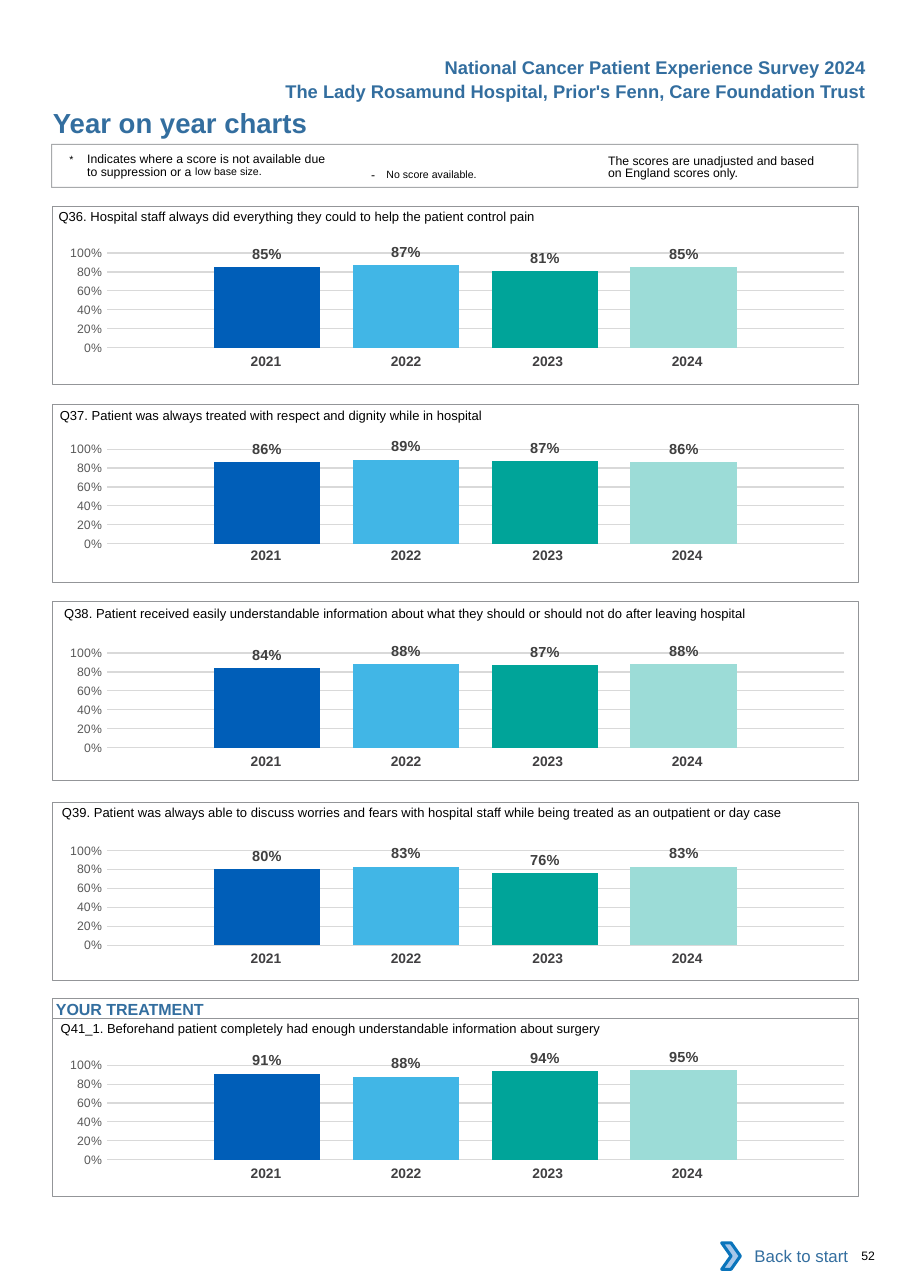
"""Build the year on year charts page of the patient experience survey."""
from lxml import etree
from pptx import Presentation
from pptx.chart.data import CategoryChartData
from pptx.dml.color import RGBColor
from pptx.enum.chart import XL_CHART_TYPE as ChartType, XL_LABEL_POSITION as LabelPosition, XL_TICK_MARK as TickMark
from pptx.enum.shapes import MSO_SHAPE as Shape
from pptx.enum.text import MSO_ANCHOR as Anchor, MSO_AUTO_SIZE as AutoSize, PP_ALIGN as Align
from pptx.oxml import parse_xml
from pptx.oxml.ns import nsdecls, qn
from pptx.util import Cm, Pt

BLUE = RGBColor(0x33, 0x6E, 0x9F)
BLACK = RGBColor(0x00, 0x00, 0x00)
WHITE = RGBColor(0xFF, 0xFF, 0xFF)
BORDER = RGBColor(0x93, 0x95, 0x98)
GRID = RGBColor(0xD9, 0xD9, 0xD9)
AXIS_TEXT = RGBColor(0x59, 0x59, 0x59)
LABEL_TEXT = RGBColor(0x40, 0x40, 0x40)
YEAR_TEXT = RGBColor(0x41, 0x40, 0x42)
CHEVRON_FILL = RGBColor(0xA8, 0xC7, 0xE9)
CHEVRON_LINE = RGBColor(0x0A, 0x74, 0xBB)
SERIES_COLORS = [RGBColor(0x00, 0x5E, 0xB8), RGBColor(0x41, 0xB6, 0xE6),
                 RGBColor(0x00, 0xA4, 0x99), RGBColor(0x9C, 0xDC, 0xD7)]
YEARS = ["2021", "2022", "2023", "2024"]
YEAR_WIDTHS = [3.23, 3.23, 3.4, 3.23]
YEAR_RIGHT_MARGINS = [0, 0, 0.1, 0.3]
PANEL_LEFT, PANEL_WIDTH = 1.21, 18.59
NO_TABLE_STYLE = "{2D5ABB26-0587-4C30-8999-92F81FD0307C}"
PLOT_AREA = {"x": 0.079, "y": 0.145, "w": 0.915, "h": 0.666}

PANELS = [
    ("Q36. Hospital staff always did everything they could to help the patient control pain",
     (1.32, 4.57), 0.03, 8.03, 5.36, 4.75, [0.85, 0.87, 0.81, 0.85]),
    ("Q37. Patient was always treated with respect and dignity while in hospital",
     (1.35, 9.17), 0.03, 12.5, 9.88, 9.32, [0.86, 0.89, 0.87, 0.86]),
    ("Q38. Patient received easily understandable information about what they should or should not do "
     "after leaving hospital",
     (1.4, 13.72), 0.08, 17.25, 14.58, 13.87, [0.84, 0.88, 0.87, 0.88]),
    ("Q39. Patient was always able to discuss worries and fears with hospital staff while being treated "
     "as an outpatient or day case",
     (1.4, 18.31), 0.03, 21.79, 19.13, 18.49, [0.80, 0.83, 0.76, 0.83]),
    ("Q41_1. Beforehand patient completely had enough understandable information about surgery",
     (1.37, 23.29), 0.03, 26.75, 24.08, 23.47, [0.91, 0.88, 0.94, 0.95]),
]


def write_text(shape, text, size, color=BLACK, bold=False, align=Align.LEFT, margins=(0, 0, 0, 0)):
    frame = shape.text_frame
    frame.text = text
    frame.word_wrap = True
    frame.auto_size = AutoSize.NONE
    frame.vertical_anchor = Anchor.TOP
    frame.margin_left, frame.margin_top, frame.margin_right, frame.margin_bottom = map(Cm, margins)
    paragraph = frame.paragraphs[0]
    paragraph.alignment = align
    for run in paragraph.runs:
        run.font.name, run.font.size, run.font.bold = "Arial", Pt(size), bold
        run.font.color.rgb = color
    return paragraph


def add_box(left, top, width, height, line_width=0.5, kind=Shape.RECTANGLE):
    box = slide.shapes.add_shape(kind, Cm(left), Cm(top), Cm(width), Cm(height))
    box.shadow.inherit = False
    box.fill.background()
    box.line.color.rgb = BORDER
    box.line.width = Pt(line_width)
    return box


presentation = Presentation()
presentation.slide_width, presentation.slide_height = Cm(20.98), Cm(29.69)
slide = presentation.slides.add_slide(presentation.slide_layouts[5])

title = slide.shapes.title
title.left, title.top, title.width, title.height = Cm(1.19), Cm(2.44), Cm(11.43), Cm(0.76)
write_text(title, "Year on year charts", 18, BLUE, True, margins=(0.03, 0, 0, 0)).space_before = Pt(4.1)

headers = [("National Cancer Patient Experience Survey 2024", 9.96, 1.17, 10.26),
           ("The Lady Rosamund Hospital, Prior's Fenn, Care Foundation Trust", 6.22, 1.73, 14)]
for text, left, top, width in headers:
    header = slide.shapes.add_textbox(Cm(left), Cm(top), Cm(width), Cm(0.76))
    write_text(header, text, 12, BLUE, True, Align.RIGHT, (0.25, 0.13, 0.25, 0.13))
    header.text_frame.word_wrap = False

legend_box = add_box(1.19, 3.33, PANEL_WIDTH, 0.99, 0.75)
line_color = legend_box.line.fill._xPr.find(qn("a:solidFill"))[0]
etree.SubElement(line_color, qn("a:alpha")).set("val", "80000")

legend_notes = [
    ((1.6, 3.5, 6.91, 0.6), (0, 0.08, 0.89, 0), 0.41, 8.1,
     [("*\t", 12, 3), ("Indicates where a score is not available due to suppression or a ", 8, 0),
      ("low base size.", 12, 7)]),
    ((8.31, 3.58, 4.65, 0.61), (0.25, 0.13, 0.25, 0.13), 0.35, None,
     [("-\t", 8, 0), ("No score available.", 12, 3)]),
    ((14.02, 3.5, 5.11, 0.69), (0, 0.08, 0.13, 0), 0, 8.1,
     [("The scores are unadjusted and based on England scores only.", 8, 0)]),
]
for place, margins, hanging, line_spacing, parts in legend_notes:
    note = slide.shapes.add_textbox(*map(Cm, place))
    paragraph = write_text(note, "", 8, margins=margins)
    paragraph.space_before = Pt(2.5)
    if line_spacing:
        paragraph.line_spacing = Pt(line_spacing)
    properties = paragraph._p.get_or_add_pPr()
    properties.set("marL", str(Cm(hanging)))
    properties.set("indent", str(-Cm(hanging)))
    for text, size, baseline in parts:
        run = paragraph.add_run()
        run.text = text
        run.font.name, run.font.size = "Arial", Pt(size)
        run.font.color.rgb = BLACK
        if baseline:
            run._r.get_or_add_rPr().set("baseline", str(baseline * 1000))

section = add_box(PANEL_LEFT, 23.01, PANEL_WIDTH, 0.46)
write_text(section, "YOUR TREATMENT", 10.5, BLUE, True, margins=(0.08, 0.03, 0, 0))

for question, (left, top), inset, years_top, chart_top, panel_top, scores in PANELS:
    question_box = slide.shapes.add_textbox(Cm(left), Cm(top), Cm(18.35), Cm(0.61))
    write_text(question_box, question, 8.5, margins=(inset, 0.23, 0, 0))

    table_frame = slide.shapes.add_table(1, len(YEARS), Cm(4.39), Cm(years_top), Cm(sum(YEAR_WIDTHS)), Cm(0.69))
    table = table_frame.table
    table.first_row = table.horz_banding = False
    table._tbl.tblPr.find(qn("a:tableStyleId")).text = NO_TABLE_STYLE
    for column, (year, width, right) in enumerate(zip(YEARS, YEAR_WIDTHS, YEAR_RIGHT_MARGINS)):
        table.columns[column].width = Cm(width)
        cell = table.cell(0, column)
        cell.fill.background()
        cell.margin_right = Cm(right)
        cell.text_frame.text = year
        paragraph = cell.text_frame.paragraphs[0]
        paragraph.alignment = Align.CENTER
        font = paragraph.runs[0].font
        font.name, font.size, font.bold = "Arial", Pt(9), True
        font.color.rgb = YEAR_TEXT

    chart_data = CategoryChartData(number_format="0%")
    chart_data.categories = ["1"]
    for number, score in enumerate(scores, 1):
        chart_data.add_series(f"Series {number}", [score])
    chart = slide.shapes.add_chart(ChartType.COLUMN_CLUSTERED, Cm(0.99), Cm(chart_top),
                                   Cm(PANEL_WIDTH), Cm(3.28), chart_data).chart
    chart.has_title = chart.has_legend = False
    chart.font.name, chart.font.size = "Calibri", Pt(10)
    chart.font.color.rgb = BLACK
    chart.category_axis.visible = False
    axis = chart.value_axis
    axis.minimum_scale, axis.maximum_scale, axis.major_unit = 0, 1, 0.2
    axis.major_tick_mark = axis.minor_tick_mark = TickMark.NONE
    axis.format.line.fill.background()
    axis.major_gridlines.format.line.color.rgb = GRID
    axis.major_gridlines.format.line.width = Pt(0.75)
    axis.tick_labels.number_format, axis.tick_labels.number_format_is_linked = "0%", False
    axis.tick_labels.font.name, axis.tick_labels.font.size = "Arial", Pt(8)
    axis.tick_labels.font.color.rgb = AXIS_TEXT
    plot = chart.plots[0]
    plot.gap_width, plot.overlap, plot.vary_by_categories = 200, -30, False
    for series, color in zip(plot.series, SERIES_COLORS):
        series.format.fill.solid()
        series.format.fill.fore_color.rgb = color
        labels = series.data_labels
        labels.show_value, labels.position = True, LabelPosition.OUTSIDE_END
        labels.number_format, labels.number_format_is_linked = "0%", False
        labels.font.name, labels.font.size, labels.font.bold = "Arial", Pt(9.5), True
        labels.font.color.rgb = LABEL_TEXT
    plot_area = chart._chartSpace.chart.plotArea
    for layout in plot_area.findall(qn("c:layout")):
        plot_area.remove(layout)
    modes = "".join(f'<c:{side}Mode val="edge"/>' for side in "xy")
    sizes = "".join(f'<c:{side} val="{value}"/>' for side, value in PLOT_AREA.items())
    plot_area.insert(0, parse_xml(f'<c:layout {nsdecls("c")}><c:manualLayout><c:layoutTarget val="inner"/>'
                                  f'{modes}{sizes}</c:manualLayout></c:layout>'))

    add_box(PANEL_LEFT, panel_top, PANEL_WIDTH, 4.11)

back_button = add_box(16.81, 28.42, 3, 1.07)
back_button.fill.solid()
back_button.fill.fore_color.rgb = WHITE
back_button.line.fill.background()
write_text(back_button, "Back to start", 11, BLUE, align=Align.RIGHT, margins=(0.25, 0.13, 0.25, 0.13))
back_button.text_frame.vertical_anchor = Anchor.MIDDLE

chevron = add_box(16.64, 28.65, 0.43, 0.61, 2, Shape.CHEVRON)
chevron.fill.solid()
chevron.fill.fore_color.rgb = CHEVRON_FILL
chevron.line.color.rgb = CHEVRON_LINE

page_number = slide.shapes.add_textbox(Cm(19.61), Cm(28.78), Cm(1.3), Cm(0.33))
write_text(page_number, "52", 8, margins=(0.25, 0, 0, 0))

presentation.save("out.pptx")
